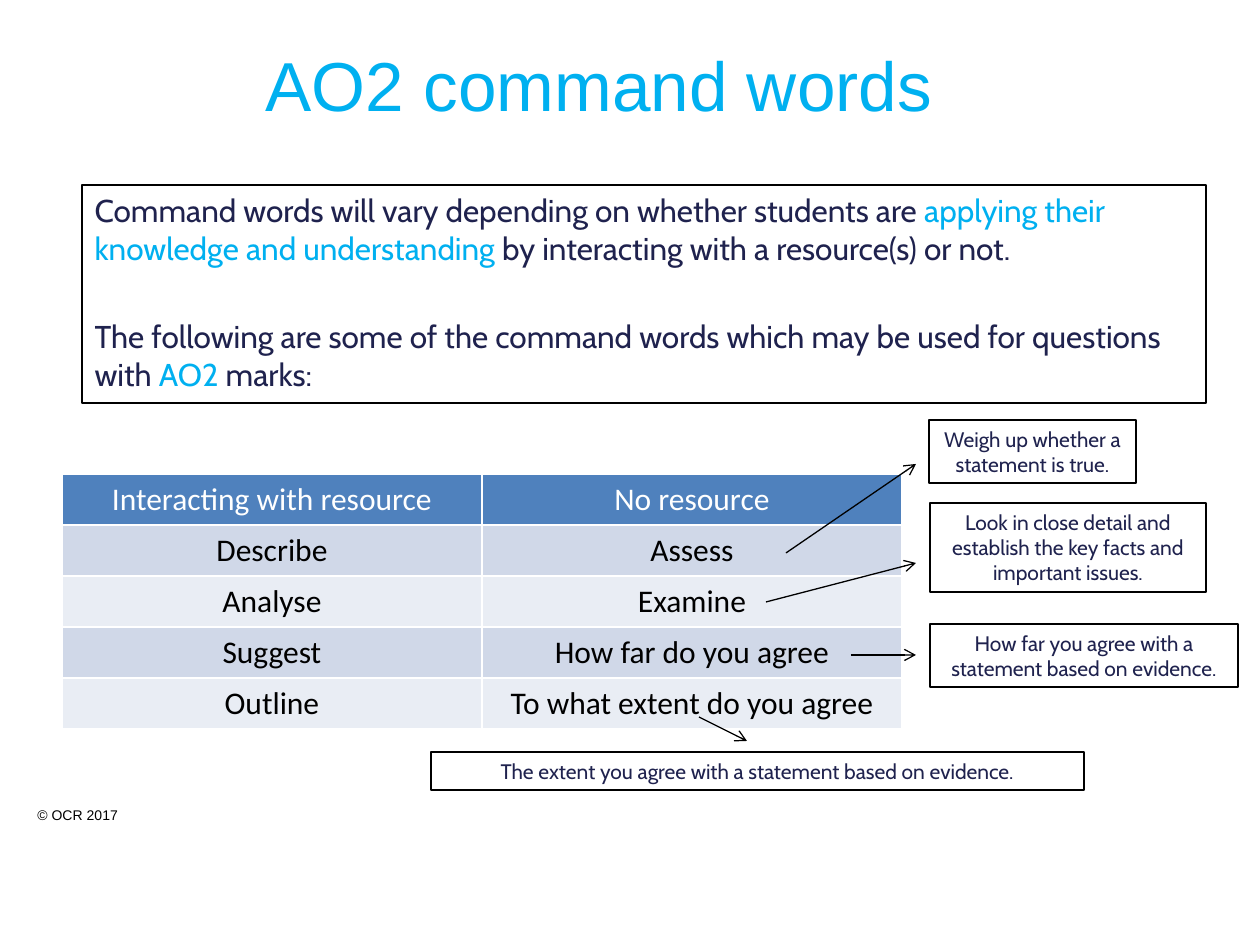
from dataclasses import dataclass

from lxml import etree
from pptx import Presentation
from pptx.dml.color import RGBColor
from pptx.enum.shapes import MSO_CONNECTOR
from pptx.enum.text import MSO_ANCHOR, MSO_AUTO_SIZE, PP_ALIGN
from pptx.oxml.ns import qn
from pptx.util import Emu, Pt

CENTER, LEFT = PP_ALIGN.CENTER, PP_ALIGN.LEFT
MIDDLE = MSO_ANCHOR.MIDDLE
NO_AUTOFIT = MSO_AUTO_SIZE.NONE
STRAIGHT = MSO_CONNECTOR.STRAIGHT
PX_PER_INCH = 126


@dataclass(frozen=True)
class Theme:
    accent: str = "00B0F0"
    ink: str = "1F224E"
    black: str = "000000"
    white: str = "FFFFFF"
    header: str = "4F81BD"
    bands: tuple = ("D0D8E8", "E9EDF4")
    title_font: str = "Arial"
    body_font: str = "Cabin"
    table_font: str = "Calibri"
    title_size: float = 39.6
    body_size: int = 18
    callout_size: int = 12
    footer_size: int = 8
    line_width: float = 0.75
    paragraph_gap: float = 28.5


def px(length):
    return Emu(round(length * 914400 / PX_PER_INCH))


def rgb(color):
    return RGBColor.from_string(color)


class SlideBuilder:
    def __init__(self, page, theme):
        self.page = page
        self.theme = theme

    def place(self, shape, left, top, width, height):
        shape.left, shape.top = px(left), px(top)
        shape.width, shape.height = px(width), px(height)

    def outline(self, shape):
        shape.line.color.rgb = rgb(self.theme.black)
        shape.line.width = Pt(self.theme.line_width)

    def format(self, para, font, size, color, align=LEFT):
        para.alignment = align
        for span in para.runs:
            span.font.name = font
            span.font.size = Pt(size)
            span.font.bold = False
            span.font.color.rgb = rgb(color)

    def title(self, text, *area):
        box = self.page.shapes.title
        self.place(box, *area)
        frame = box.text_frame
        frame.text = text
        frame.auto_size = NO_AUTOFIT
        frame.vertical_anchor = MIDDLE
        self.format(frame.paragraphs[0], self.theme.title_font,
                    self.theme.title_size, self.theme.accent, CENTER)

    def body(self, paragraphs, *area):
        """Each paragraph is a list of pieces; every second piece is accented."""
        theme = self.theme
        box = self.page.placeholders[1]
        self.place(box, *area)
        self.outline(box)
        frame = box.text_frame
        frame.auto_size = NO_AUTOFIT
        for index, pieces in enumerate(paragraphs):
            para = frame.add_paragraph() if index else frame.paragraphs[0]
            properties = para._p.get_or_add_pPr()
            properties.set("marL", "0")
            properties.set("indent", "0")
            etree.SubElement(properties, qn("a:buNone"))
            para.space_before = Pt(theme.paragraph_gap if index else 0)
            for piece in pieces:
                para.add_run().text = piece
            self.format(para, theme.body_font, theme.body_size, theme.ink)
            for span in para.runs[1::2]:
                span.font.color.rgb = rgb(theme.accent)

    def text(self, text, area, font, size, color, align=LEFT):
        box = self.page.shapes.add_textbox(*map(px, area))
        frame = box.text_frame
        frame.word_wrap = True
        frame.text = text
        self.format(frame.paragraphs[0], font, size, color, align)
        return box

    def callout(self, text, *area, fill=None):
        box = self.text(text, area, self.theme.body_font,
                        self.theme.callout_size, self.theme.ink, CENTER)
        self.outline(box)
        if fill:
            box.fill.solid()
            box.fill.fore_color.rgb = rgb(fill)

    def table(self, rows, left, top, column_width, row_height):
        theme = self.theme
        columns = len(rows[0])
        table = self.page.shapes.add_table(
            len(rows), columns, px(left), px(top),
            px(column_width * columns), px(row_height * len(rows))).table
        for row_index, row in enumerate(rows):
            fill = theme.bands[(row_index - 1) % 2] if row_index else theme.header
            color = theme.black if row_index else theme.white
            for column_index, text in enumerate(row):
                cell = table.cell(row_index, column_index)
                cell.text = text
                cell.fill.solid()
                cell.fill.fore_color.rgb = rgb(fill)
                self.format(cell.text_frame.paragraphs[0], theme.table_font,
                            theme.body_size, color, CENTER)

    def arrow(self, *ends):
        arrow = self.page.shapes.add_connector(STRAIGHT, *map(px, ends))
        self.outline(arrow)
        etree.SubElement(arrow.line._get_or_add_ln(), qn("a:tailEnd"), type="arrow")
        etree.SubElement(arrow._element.spPr, qn("a:effectLst"))


def main():
    theme = Theme()
    deck = Presentation()
    deck.slide_width, deck.slide_height = px(1260), px(945)
    builder = SlideBuilder(deck.slides.add_slide(deck.slide_layouts[1]), theme)

    # Footer, title and introduction
    builder.text("© OCR 2017", (25, 800, 238, 30), theme.title_font,
                 theme.footer_size, theme.black)
    builder.title("AO2 command words", 0, 37, 1198, 94)
    builder.body([
        ["Command words will vary depending on whether students are ",
         "applying their knowledge and understanding",
         " by interacting with a resource(s) or not."],
        ["The following are some of the command words which may be used "
         "for questions with ", "AO2", " marks:"],
    ], 82, 185, 1124, 218)

    # Command words
    builder.table([
        ("Interacting with resource", "No resource"),
        ("Describe", "Assess"),
        ("Analyse", "Examine"),
        ("Suggest", "How far do you agree"),
        ("Outline", "To what extent do you agree"),
    ], 62, 474, 420, 51)

    # Explanations
    builder.callout("Weigh up whether a statement is true.", 929, 420, 207, 63)
    builder.callout("Look in close detail and establish the key facts and "
                    "important issues.", 930, 503, 276, 89)
    builder.callout("How far you agree with a statement based on evidence.",
                    930, 624, 308, 63)
    builder.callout("The extent you agree with a statement based on evidence.",
                    431, 752, 653, 38, fill=theme.white)

    # Arrows from command words to explanations
    for ends in ((786, 553, 916, 464), (766, 602, 916, 563),
                 (851, 655, 916, 655), (699, 717, 747, 741)):
        builder.arrow(*ends)

    deck.save("out.pptx")


if __name__ == "__main__":
    main()
